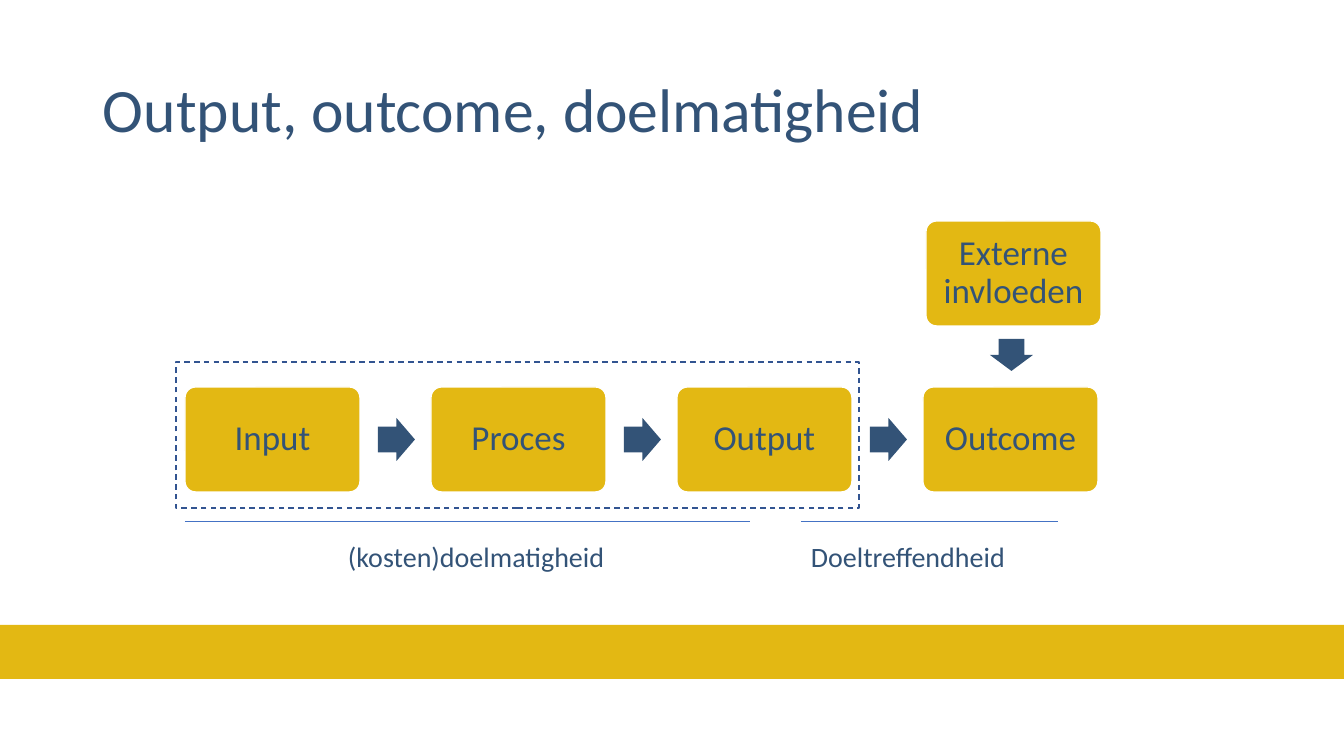
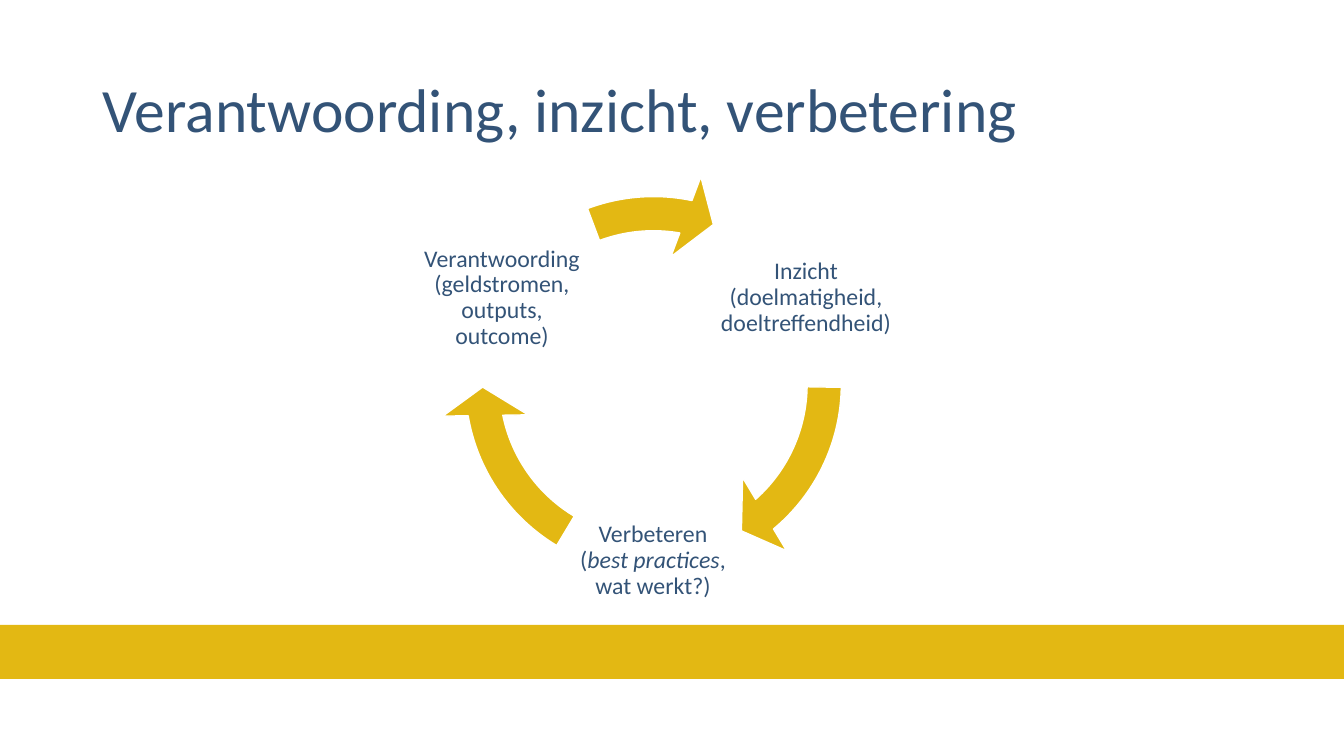
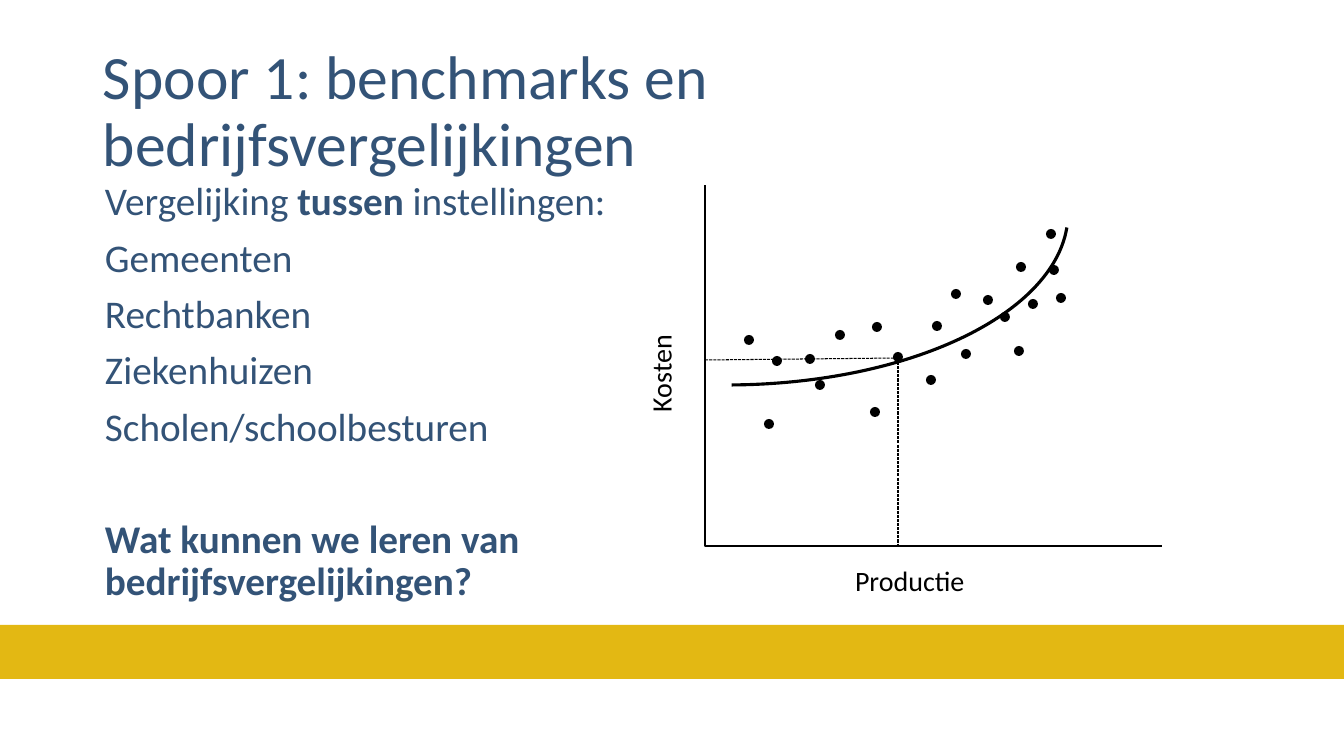
from lxml import etree
from pptx import Presentation
from pptx.dml.color import RGBColor
from pptx.enum.dml import MSO_LINE
from pptx.enum.shapes import MSO_CONNECTOR, MSO_SHAPE
from pptx.enum.text import MSO_ANCHOR, PP_ALIGN
from pptx.oxml.ns import qn
from pptx.util import Emu, Pt

SCALE = 914400 / 100.8
RECT, ROUND, OVAL = MSO_SHAPE.RECTANGLE, MSO_SHAPE.ROUNDED_RECTANGLE, MSO_SHAPE.OVAL
RIGHT, DOWN = MSO_SHAPE.RIGHT_ARROW, MSO_SHAPE.DOWN_ARROW
LOOP, ARC = MSO_SHAPE.CIRCULAR_ARROW, MSO_SHAPE.ARC
LINE = MSO_CONNECTOR.STRAIGHT
DASH, DOTS = MSO_LINE.DASH, MSO_LINE.SQUARE_DOT
TOP, MID = MSO_ANCHOR.TOP, MSO_ANCHOR.MIDDLE
LEFT, MIDDLE = PP_ALIGN.LEFT, PP_ALIGN.CENTER
GOLD, NAVY, WHITE, BLACK = "E3B813", "335377", "FFFFFF", "000000"
BLUE, FRAME = "4472C4", "325491"
FONT = "Calibri"
WIDE, HIGH = 1344, 756
STEPS = ["Input", "Proces", "Output", "Outcome"]
CYCLE = [
    (276, 37, [("Inzicht\n(doelmatigheid, doeltreffendheid)", "")], (29.64, 0.52)),
    (123, 300, [("Verbeteren\n(", ""), ("best practices", "i"), (", wat werkt?)", "")],
     (101.72, 72.6)),
    (-28, 37, [("Verantwoording (geldstromen, outputs, outcome)", "")], (168.57, 149.67)),
]
ITEMS = [
    [("Vergelijking", ""), (" tussen ", "b"), ("instellingen:", "")],
    [("Gemeenten", "")],
    [("Rechtbanken", "")],
    [("Ziekenhuizen", "")],
    [("Scholen/schoolbesturen", "")],
    [("Wat kunnen we leren van bedrijfsvergelijkingen?", "b")],
]
POINTS = [
    (39, 150), (59, 234), (67, 171), (100, 169), (110, 195), (130, 145), (165, 222),
    (167, 137), (188, 167), (221, 190), (227, 136), (246, 104), (256, 164), (278, 110),
    (295, 127), (309, 161), (311, 77), (323, 114), (341, 44), (344, 80), (351, 108),
]


def px(n):
    """Turn pixels into EMU."""
    return Emu(round(n * SCALE))


def color(code):
    """Turn a hex string into a colour."""
    return RGBColor.from_string(code)


def stroke(line, code, width, dash=None):
    """Style a line."""
    line.color.rgb = color(code)
    line.width = Pt(width)
    if dash:
        line.dash_style = dash


def paint(item, fill=None, line=None):
    """Set the fill and the outline of a shape."""
    item.shadow.inherit = False
    if fill:
        item.fill.solid()
        item.fill.fore_color.rgb = color(fill)
    else:
        item.fill.background()
    if line:
        stroke(item.line, *line)
    else:
        item.line.fill.background()


def shape(slide, kind, box, fill=None, line=None, adj=()):
    """Add a preset shape."""
    item = slide.shapes.add_shape(kind, *map(px, box))
    for i, value in enumerate(adj):
        item.adjustments[i] = value
    paint(item, fill, line)
    return item


def rule(slide, start, end, code, width, dash=None):
    """Add a straight line."""
    item = slide.shapes.add_connector(LINE, *map(px, start + end))
    stroke(item.line, code, width, dash)
    etree.SubElement(item._element.spPr, qn("a:effectLst"))


def write(item, paras, size, code=NAVY, align=LEFT, anchor=TOP,
          pad=(10, 5), lead=1.0, gaps=(), wrap=True):
    """Fill a shape with paragraphs of styled runs."""
    frame = item.text_frame
    frame.word_wrap = wrap
    frame.vertical_anchor = anchor
    frame.margin_left = frame.margin_right = px(pad[0])
    frame.margin_top = frame.margin_bottom = px(pad[1])
    for i, runs in enumerate(paras):
        para = frame.add_paragraph() if i else frame.paragraphs[0]
        para.alignment = align
        para.line_spacing = lead
        if i:
            para.space_before = Pt(gaps[i - 1])
        for text, style in runs:
            for j, part in enumerate(text.split("\n")):
                if j:
                    para.add_line_break()
                run = para.add_run()
                run.text = part
                font = run.font
                font.name, font.size = FONT, Pt(size)
                font.color.rgb = color(code)
                font.bold, font.italic = style == "b", style == "i"


def label(slide, box, paras, size, **style):
    """Add a text box."""
    item = slide.shapes.add_textbox(*map(px, box))
    write(item, paras, size, **style)
    return item


def base(deck, title):
    """Add a slide with the band and the title."""
    slide = deck.slides.add_slide(deck.slide_layouts[6])
    shape(slide, RECT, (0, 625, WIDE, 54), GOLD)
    label(slide, (93, 40, 1159, 146), [[(title, "")]], 44, anchor=MID, lead=0.9)
    return slide


def node(slide, x, y, text):
    """Add a rounded step box."""
    item = shape(slide, ROUND, (x, y, 175, 105), GOLD, (WHITE, 1), (0.1,))
    write(item, [[(text, "")]], 25, align=MIDDLE, anchor=MID, pad=(10, 10), lead=0.9)


def flow(slide, x, y, pitch=246):
    """Draw the chain of steps with its outside influence."""
    last = x + pitch * (len(STEPS) - 1)
    for i, text in enumerate(STEPS):
        left = x + i * pitch
        node(slide, left, y, text)
        if left < last:
            shape(slide, RIGHT, (left + 193, y + 31, 37, 43), NAVY, adj=(0.6, 0.5))
    node(slide, last + 3, y - 166, "Externe invloeden")
    shape(slide, DOWN, (last + 67, y - 48, 43, 32), NAVY, adj=(0.6, 0.5))
    shape(slide, RECT, (x - 9, y - 25, 683, 146), line=(FRAME, 1, DASH))
    for left, right, start, width, text in [
        (0, 565, 153, 279, "(kosten)doelmatigheid"),
        (616, 873, 616, 217, "Doeltreffendheid"),
    ]:
        rule(slide, (x + left, y + 134), (x + right, y + 134), BLUE, 0.5)
        label(slide, (x + start, y + 147, width, 44), [[(text, "")]], 20, wrap=False)


def cycle(slide, x, y, size):
    """Draw the ring of arrows with its three texts."""
    for left, top, runs, turn in CYCLE:
        label(slide, (x + left, y + top, 180, 180), [runs], 17,
              align=MIDDLE, anchor=MID, pad=(2, 2), lead=0.9)
        shape(slide, LOOP, (x, y, size, size), GOLD, (WHITE, 1),
              (0.08, 5.76, *turn, 0.1))


def plot(slide, x, y, wide, high):
    """Draw the sketch of costs against production."""
    path = slide.shapes.build_freeform(x, y, SCALE)
    path.add_line_segments([(x, y + high), (x + wide, y + high)], close=False)
    paint(path.convert_to_shape(), line=(BLACK, 1.5))
    shape(slide, ARC, (x - 319, y - 143, 682, 343), line=(BLACK, 2.25), adj=(1.42, 53.09))
    for left, top in POINTS:
        shape(slide, OVAL, (x + left, y + top, 10, 10), BLACK)
    rule(slide, (x + 193, y + 177), (x + 193, y + high), BLACK, 0.75, DOTS)
    rule(slide, (x + 193, y + 173), (x, y + 175), BLACK, 0.75, DOTS)
    label(slide, (x + 150, y + 378, 113, 34), [[("Productie", "")]], 20,
          code=BLACK, pad=(0, 0), wrap=False)
    side = label(slide, (x - 105, y + 155, 121, 44), [[("Kosten", "")]], 20, code=BLACK)
    side.rotation = 270


def main():
    """Build the three slides."""
    deck = Presentation()
    deck.slide_width, deck.slide_height = px(WIDE), px(HIGH)
    flow(base(deck, "Output, outcome, doelmatigheid"), 185, 387)
    cycle(base(deck, "Verantwoording, inzicht, verbetering"), 440, 171, 427)
    slide = base(deck, "Spoor 1: benchmarks en bedrijfsvergelijkingen")
    label(slide, (95, 177, 526, 440), ITEMS, 28, lead=0.9, gaps=(10, 10, 10, 10, 50))
    plot(slide, 705, 185, 457, 361)
    deck.save("out.pptx")


if __name__ == "__main__":
    main()
